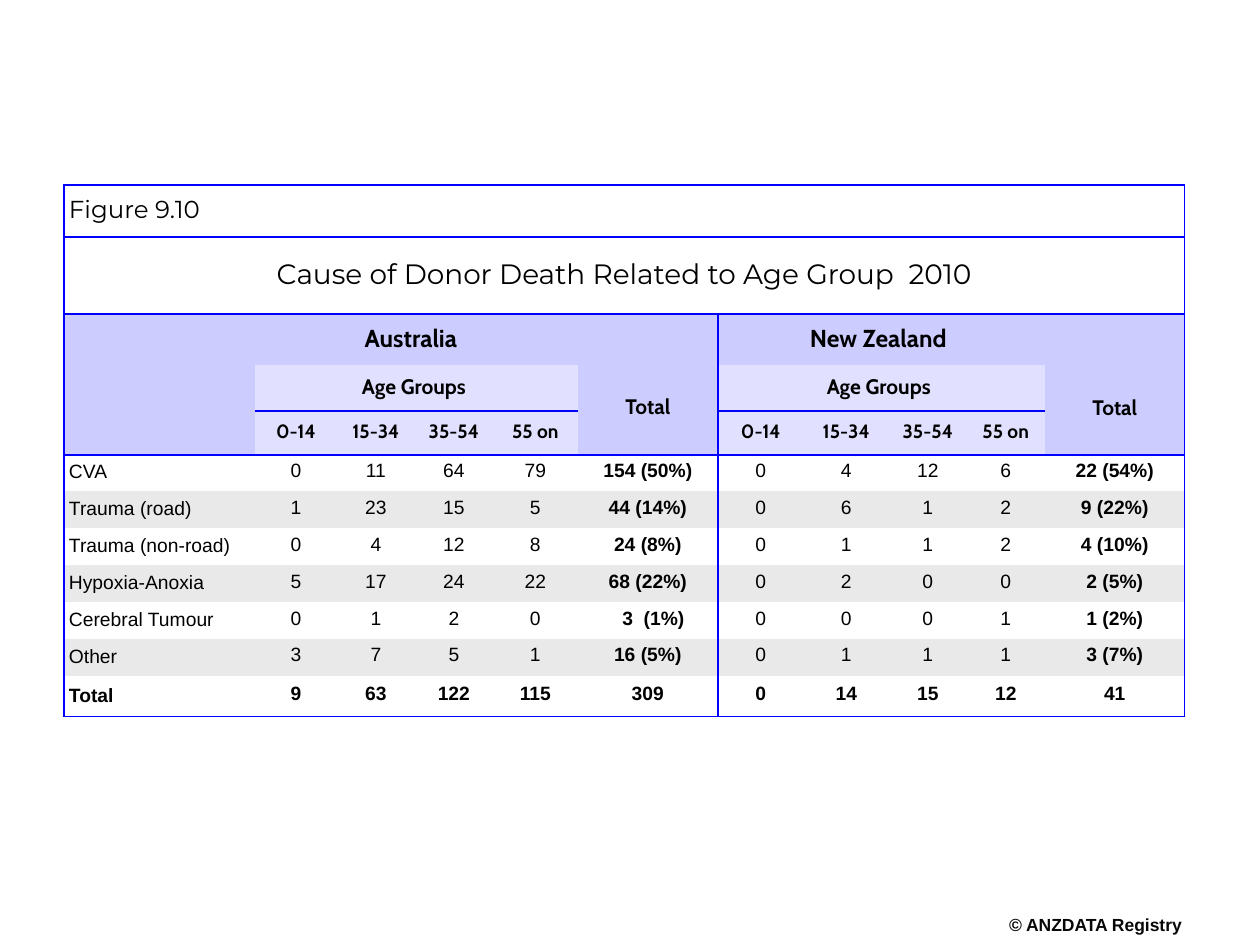
from pptx import Presentation
from pptx.dml.color import RGBColor
from pptx.enum.text import MSO_ANCHOR, PP_ALIGN
from pptx.oxml.ns import qn
from pptx.util import Pt
from lxml.etree import SubElement

PX = 7257  # EMU per px, at 126 px to the inch
WIDTHS = [191, 82, 78, 78, 85, 140, 86, 85, 78, 78, 140]
HEIGHTS = [52, 77, 51, 46, 44, 36, 37, 37, 37, 37, 37, 41]
BLUE, HEAD, AGE, BAND = "0000FF", "CCCCFF", "E1E1FF", "E9E9E9"
AGES = ["0-14", "15-34", "35-54", "55 on"]
TOTALS = (5, 10)  # columns that close each country
FIRST = 5  # first row of data
DATA = [
    ["CVA", 0, 11, 64, 79, "154 (50%)", 0, 4, 12, 6, "22 (54%)"],
    ["Trauma (road)", 1, 23, 15, 5, "44 (14%)", 0, 6, 1, 2, "9 (22%)"],
    ["Trauma (non-road)", 0, 4, 12, 8, "24 (8%)", 0, 1, 1, 2, "4 (10%)"],
    ["Hypoxia-Anoxia", 5, 17, 24, 22, "68 (22%)", 0, 2, 0, 0, "2 (5%)"],
    ["Cerebral Tumour", 0, 1, 2, 0, "3  (1%)", 0, 0, 0, 1, "1 (2%)"],
    ["Other", 3, 7, 5, 1, "16 (5%)", 0, 1, 1, 1, "3 (7%)"],
    ["Total", 9, 63, 122, 115, "309", 0, 14, 15, 12, "41"],
]


def px(n):
    return n * PX


def color(code):
    return RGBColor.from_string(code)


def write(frame, text, size=11, font="Arial", bold=False, ink="000000",
          align=PP_ALIGN.CENTER, lead=0.85):
    para = frame.paragraphs[0]
    para.alignment, para.line_spacing = align, lead
    run = para.add_run()
    run.text = text
    run.font.size, run.font.name, run.font.bold = Pt(size), font, bold
    run.font.color.rgb = color(ink)


def fill_cell(cell, text, pad=(5, 5, 5, 5), **form):
    """Put text in a cell; pad is left, top, right, bottom."""
    cell.vertical_anchor = MSO_ANCHOR.MIDDLE
    (cell.margin_left, cell.margin_top,
     cell.margin_right, cell.margin_bottom) = map(px, pad)
    write(cell.text_frame, text, **form)


def edges(row, col):
    """Name the sides of a cell that carry a blue line."""
    if row < 2:
        return "LRTB"
    age = col not in (0, *TOTALS)
    rules = {
        "L": col in (0, 6),
        "R": col in TOTALS,
        "T": row in (2, FIRST) or (row == 4 and age),
        "B": row in (4, 11) or (row == 3 and age),
    }
    return "".join(side for side, on in rules.items() if on)


def shade(row, col):
    if row < 2:
        return None
    if row < FIRST:
        return HEAD if row == 2 or col in (0, *TOTALS) else AGE
    return BAND if row in (6, 8, 10) else None


def style(cell, row, col):
    props = cell._tc.get_or_add_tcPr()
    lit = edges(row, col)
    for side in "LRTB":
        line = SubElement(props, qn("a:ln" + side), w=str(Pt(1)))
        if side in lit:
            solid = SubElement(line, qn("a:solidFill"))
            SubElement(solid, qn("a:srgbClr"), val=BLUE)
        else:
            SubElement(line, qn("a:noFill"))
    tint = shade(row, col)
    if tint:
        cell.fill.solid()
        cell.fill.fore_color.rgb = color(tint)
    else:
        cell.fill.background()


def add_grid(slide):
    frame = slide.shapes.add_table(len(HEIGHTS), len(WIDTHS), px(64), px(185),
                                   px(sum(WIDTHS)), px(sum(HEIGHTS)))
    table = frame.table
    table.first_row = table.horz_banding = False
    for col, width in zip(table.columns, WIDTHS):
        col.width = px(width)
    for row, height in zip(table.rows, HEIGHTS):
        row.height = px(height)
    for r in range(len(HEIGHTS)):
        for c in range(len(WIDTHS)):
            style(table.cell(r, c), r, c)
    return table


def add_titles(table):
    for row in (0, 1):
        table.cell(row, 0).merge(table.cell(row, 10))
    fill_cell(table.cell(0, 0), "Figure 9.10", pad=(5, 3, 5, 3), size=14,
              font="Montserrat", align=PP_ALIGN.LEFT)
    fill_cell(table.cell(1, 0), "Cause of Donor Death Related to Age Group  2010",
              pad=(10, 10, 10, 10), size=16, font="Montserrat")


def add_heads(table):
    table.cell(2, 0).merge(table.cell(4, 0))
    form = dict(font="Cabin", bold=True)
    # Each country: first column, name, right pad of name, top pad of total
    for col, name, right, top in ((1, "Australia", 16, 51),
                                  (6, "New Zealand", 11, 55)):
        for row in (2, 3):
            table.cell(row, col).merge(table.cell(row, col + 3))
        table.cell(2, col + 4).merge(table.cell(4, col + 4))
        fill_cell(table.cell(2, col), name, pad=(5, 5, right, 5), size=14, **form)
        fill_cell(table.cell(3, col), "Age Groups", pad=(5, 5, 10, 5), size=12, **form)
        fill_cell(table.cell(2, col + 4), "Total", pad=(5, top, 5, 5), size=12, **form)
        for c, age in enumerate(AGES, col):
            fill_cell(table.cell(4, c), age, **form)


def add_data(table):
    for r, values in enumerate(DATA, FIRST):
        last = r == 11
        label, *counts = values
        fill_cell(table.cell(r, 0), label, pad=(5, 5, 5, 3), bold=last,
                  align=PP_ALIGN.LEFT, lead=0.75 if r == FIRST else 0.85)
        for c, value in enumerate(counts, 1):
            # The one padded figure lines up its digit with those above
            left = 16 if value == "3  (1%)" else 5
            fill_cell(table.cell(r, c), str(value), pad=(left, 5, 5, 5),
                      bold=last or c in TOTALS, lead=0.75)


def add_credit(slide):
    frame = slide.shapes.add_textbox(px(1007), px(917), px(177), px(21)).text_frame
    frame.margin_left = frame.margin_top = frame.margin_right = frame.margin_bottom = 0
    frame.word_wrap = False
    write(frame, "© ANZDATA Registry", size=10, bold=True, ink="080808")


def main():
    deck = Presentation()
    deck.slide_width, deck.slide_height = px(1260), px(945)
    slide = deck.slides.add_slide(deck.slide_layouts[6])
    add_credit(slide)
    table = add_grid(slide)
    add_titles(table)
    add_heads(table)
    add_data(table)
    deck.save("out.pptx")


if __name__ == "__main__":
    main()
